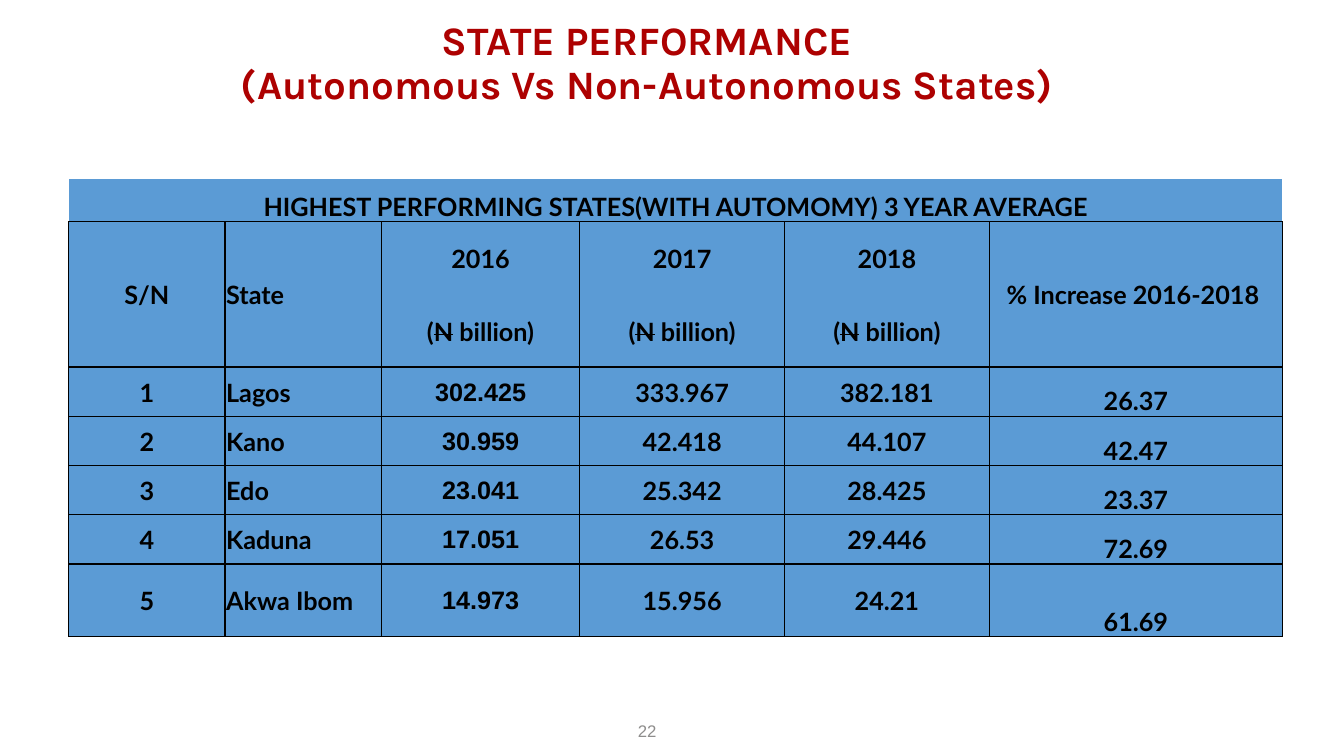
from dataclasses import dataclass

from lxml.etree import SubElement
from pptx import Presentation
from pptx.dml.color import RGBColor
from pptx.enum.text import MSO_ANCHOR as Anchor, PP_ALIGN as Align
from pptx.oxml import parse_xml
from pptx.oxml.ns import nsdecls, qn
from pptx.util import Cm, Pt

RED = RGBColor(0xAD, 0x01, 0x01)
GRAY = RGBColor(0x8E, 0x8D, 0x8C)
BLACK = RGBColor(0, 0, 0)
BLUE = RGBColor(0x5B, 0x9B, 0xD5)

COLUMN_WIDTHS = (3.94, 3.94, 5, 5.16, 5.16, 7.39)
ROW_HEIGHTS = (1.09, 1.83, 1.83, 1.24, 1.24, 1.24, 1.24, 1.83)
YEARS = ("2016", "2017", "2018")
FIRST_YEAR, LAST_COLUMN, FIRST_STATE = 2, 5, 3


@dataclass
class State:
    number: str
    name: str
    y2016: str
    y2017: str
    y2018: str
    increase: str

    def values(self) -> tuple:
        return (self.number, self.name, self.y2016, self.y2017, self.y2018, self.increase)


@dataclass
class Label:
    text: str
    left: float
    top: float
    width: float
    height: float
    size: float
    font: str
    color: RGBColor
    bold: bool = False
    line_spacing: float = 1


STATES = (
    State("1", "Lagos", "302.425", "333.967", "382.181", "26.37"),
    State("2", "Kano", "30.959", "42.418", "44.107", "42.47"),
    State("3", "Edo", "23.041", "25.342", "28.425", "23.37"),
    State("4", "Kaduna", "17.051", "26.53", "29.446", "72.69"),
    State("5", "Akwa Ibom", "14.973", "15.956", "24.21", "61.69"),
)
LABELS = (
    Label("STATE PERFORMANCE\v(Autonomous Vs Non-Autonomous States)",
          2.54, 0.76, 27.53, 1.73, 28.8, "Karla", RED, True, 0.9),
    Label("22", 12.5, 17.91, 7.62, 1.02, 12, "Arial", GRAY),
)


def write(p, text: str, *, size: float = 18, font: str = "Lato", color: RGBColor = BLACK,
          bold: bool = True, align: Align = Align.CENTER, strike: bool = False,
          rtl: bool = False) -> None:
    p.alignment = align
    for i, line in enumerate(text.split("\v")):
        if i:
            p.add_line_break()
        r = p.add_run()
        r.text = line
        r.font.size, r.font.name, r.font.bold = Pt(size), font, bold
        r.font.color.rgb = color
        rpr = r.font._element
        if strike:
            rpr.set("strike", "sngStrike")
        if rtl:
            p._p.get_or_add_pPr().set("rtl", "1")
            SubElement(rpr, qn("a:cs")).set("typeface", "Arial")


def add_label(s, label: Label) -> None:
    box = s.shapes.add_textbox(Cm(label.left), Cm(label.top), Cm(label.width), Cm(label.height))
    tf = box.text_frame
    tf.word_wrap = True
    tf.vertical_anchor = Anchor.MIDDLE
    p = tf.paragraphs[0]
    p.line_spacing = label.line_spacing
    write(p, label.text, size=label.size, font=label.font, color=label.color, bold=label.bold)


def set_border(cell, sides: str, right_width: float) -> None:
    tcpr = cell._tc.get_or_add_tcPr()
    for i, side in enumerate("LRTB"):
        width = Pt(right_width if side == "R" else 1)
        fill = '<a:solidFill><a:srgbClr val="000000"/></a:solidFill>' if side in sides else "<a:noFill/>"
        tcpr.insert(i, parse_xml(f'<a:ln{side} {nsdecls("a")} w="{width}">{fill}</a:ln{side}>'))


def border_sides(row: int, col: int) -> str:
    if row == 0:
        return "B"
    if row == 1:
        return "LRT"
    if row == 2:
        return "LRB"
    return "LRTB"


def style_cell(cell, row: int, col: int) -> None:
    cell.fill.solid()
    cell.fill.fore_color.rgb = BLUE
    cell.margin_left = cell.margin_right = cell.margin_top = Cm(0.03)
    cell.margin_bottom = 0
    at_bottom = row == 0 or (row >= FIRST_STATE and col == LAST_COLUMN)
    cell.vertical_anchor = Anchor.BOTTOM if at_bottom else Anchor.MIDDLE
    set_border(cell, border_sides(row, col), 0.5 if col >= LAST_COLUMN - 1 else 1)


def add_performance_table(s) -> None:
    frame = s.shapes.add_table(len(ROW_HEIGHTS), len(COLUMN_WIDTHS), Cm(1.73), Cm(4.5),
                               Cm(sum(COLUMN_WIDTHS)), Cm(sum(ROW_HEIGHTS)))
    table = frame.table
    table.first_row = table.horz_banding = False
    for column, width in zip(table.columns, COLUMN_WIDTHS):
        column.width = Cm(width)
    for i, height in enumerate(ROW_HEIGHTS):
        table.rows[i].height = Cm(height)
        for j in range(len(COLUMN_WIDTHS)):
            style_cell(table.cell(i, j), i, j)

    def paragraph(row: int, col: int):
        return table.cell(row, col).text_frame.paragraphs[0]

    table.cell(0, 0).merge(table.cell(0, LAST_COLUMN))
    write(paragraph(0, 0), "HIGHEST PERFORMING STATES(WITH AUTOMOMY) 3 YEAR AVERAGE")
    for col, text in ((0, "S/N"), (1, "State"), (LAST_COLUMN, "% Increase 2016-2018 ")):
        table.cell(1, col).merge(table.cell(2, col))
        write(paragraph(1, col), text, align=Align.LEFT if col == 1 else Align.CENTER)
    for col, year in enumerate(YEARS, FIRST_YEAR):
        write(paragraph(1, col), year)
        for text in ("(", "N", " billion)"):
            write(paragraph(2, col), text, strike=text == "N")
    for row, state in enumerate(STATES, FIRST_STATE):
        for col, text in enumerate(state.values()):
            write(paragraph(row, col), text, align=Align.LEFT if col == 1 else Align.CENTER,
                  rtl=col == FIRST_YEAR)


def main() -> None:
    prs = Presentation()
    prs.slide_width, prs.slide_height = Cm(33.87), Cm(19.05)
    s = prs.slides.add_slide(prs.slide_layouts[6])
    for label in LABELS:
        add_label(s, label)
    add_performance_table(s)
    prs.save("out.pptx")


if __name__ == "__main__":
    main()
